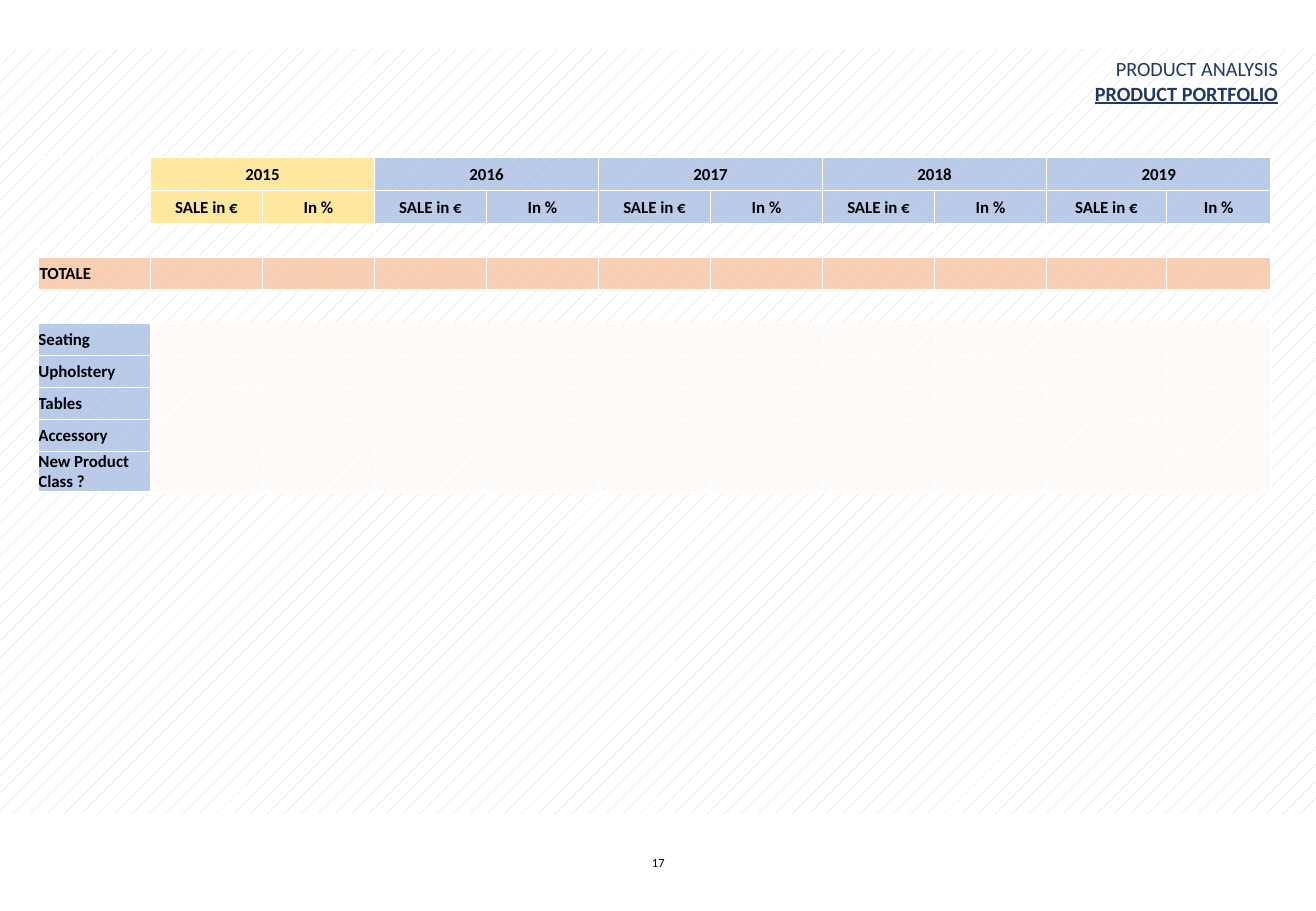
import dataclasses

import lxml.etree
import pptx
import pptx.dml.color
import pptx.enum.dml
import pptx.enum.shapes
import pptx.enum.text
import pptx.oxml.ns
import pptx.util

Pt = pptx.util.Pt
Align = pptx.enum.text.PP_ALIGN
Pattern = pptx.enum.dml.MSO_PATTERN


@dataclasses.dataclass(frozen=True)
class Theme:
    font: str = "Calibri"
    title_size: float = 12
    table_size: float = 10
    number_size: float = 7.4
    black: str = "000000"
    white: str = "FFFFFF"
    navy: str = "203864"
    backdrop: tuple = ("D0CECE", "FFFFFF")
    yellow: tuple = ("FFF2CC", "FFE699")
    blue: tuple = ("DAE3F3", "B4C7E7")
    orange: tuple = ("FBE5D6", "F8CBAD")
    pale: tuple = ("FBE5D6", "FFFFFF")


class PageBuilder:
    def __init__(self, page, theme):
        self.page = page
        self.theme = theme

    def hatch(self, fill, colours, pattern):
        fill.patterned()
        fill.pattern = pattern
        fill.fore_color.rgb, fill.back_color.rgb = map(
            pptx.dml.color.RGBColor.from_string, colours)

    def style(self, para, size, colour, align, bold=False):
        para.alignment = align
        font = para.font
        font.name = self.theme.font
        font.size = Pt(size)
        font.bold = bold
        font.color.rgb = pptx.dml.color.RGBColor.from_string(colour)

    def panel(self, left, top, width, height, colours):
        panel = self.page.shapes.add_shape(
            pptx.enum.shapes.MSO_SHAPE.RECTANGLE,
            Pt(left), Pt(top), Pt(width), Pt(height))
        panel.shadow.inherit = False
        panel.line.fill.background()
        self.hatch(panel.fill, colours, Pattern.PERCENT_5)

    def text(self, left, top, width, height, lines, size, colour, align):
        box = self.page.shapes.add_textbox(Pt(left), Pt(top), Pt(width), Pt(height))
        frame = box.text_frame
        frame.word_wrap = True
        frame.text = "\n".join(lines)
        for para in frame.paragraphs:
            self.style(para, size, colour, align)
        return frame

    def table(self, left, top, widths, heights):
        frame = self.page.shapes.add_table(
            len(heights), len(widths),
            Pt(left), Pt(top), Pt(sum(widths)), Pt(sum(heights)))
        table = frame.table
        table.first_row = False
        table.horz_banding = False
        for column, width in zip(table.columns, widths):
            column.width = Pt(width)
        for row, height in zip(table.rows, heights):
            row.height = Pt(height)
        return table

    def border(self, cell):
        qn = pptx.oxml.ns.qn
        properties = cell._tc.get_or_add_tcPr()
        for side in ("lnL", "lnR", "lnT", "lnB"):
            line = lxml.etree.SubElement(properties, qn("a:" + side), w=str(Pt(1)))
            solid = lxml.etree.SubElement(line, qn("a:solidFill"))
            lxml.etree.SubElement(solid, qn("a:srgbClr"), val=self.theme.white)

    def cell(self, cell, text="", colours=None, align=Align.CENTER, margin=0.72):
        self.border(cell)
        if colours:
            self.hatch(cell.fill, colours, Pattern.DARK_UPWARD_DIAGONAL)
        else:
            cell.fill.background()
        cell.margin_left = cell.margin_right = cell.margin_top = Pt(margin)
        cell.margin_bottom = Pt(0)
        cell.vertical_anchor = pptx.enum.text.MSO_ANCHOR.MIDDLE
        cell.text = text
        para = cell.text_frame.paragraphs[0]
        self.style(para, self.theme.table_size, self.theme.black, align, True)
        if not text:
            ending = para._p.get_or_add_endParaRPr()
            ending.set("sz", str(int(self.theme.table_size * 100)))


def portfolio_table(builder):
    theme = builder.theme
    years = ["2015", "2016", "2017", "2018", "2019"]
    products = ["Seating", "Upholstery", "Tables", "Accessory", "New Product Class ?"]
    total_row, first_product_row = 3, 5
    widths = [66.4] * 9 + [71, 62]
    heights = [19.75] * first_product_row + [18.95] * len(products)
    table = builder.table(22.8, 93.1, widths, heights)

    for row in (0, 1, 2, 4):
        builder.cell(table.cell(row, 0))
    for index, year in enumerate(years):
        colours = theme.blue if index else theme.yellow
        for offset, heading in enumerate(("SALE in €", "In %")):
            column = 1 + 2 * index + offset
            builder.cell(table.cell(0, column), "" if offset else year, colours)
            builder.cell(table.cell(1, column), heading, colours)
            for row in (2, 4):
                builder.cell(table.cell(row, column))
        table.cell(0, 1 + 2 * index).merge(table.cell(0, 2 + 2 * index))

    builder.cell(table.cell(total_row, 0), "TOTALE", theme.orange, Align.LEFT)
    for row, product in enumerate(products, first_product_row):
        builder.cell(table.cell(row, 0), product, theme.blue, Align.LEFT, 0)
    for column in range(1, len(widths)):
        builder.cell(table.cell(total_row, column), colours=theme.orange)
        for row in range(first_product_row, len(heights)):
            builder.cell(table.cell(row, column), colours=theme.pale)


def main():
    deck = pptx.Presentation()
    deck.slide_width, deck.slide_height = Pt(780), Pt(540)
    theme = Theme()
    builder = PageBuilder(deck.slides.add_slide(deck.slide_layouts[6]), theme)

    builder.panel(0, 29, 780, 453.6, theme.backdrop)
    builder.text(302.4, 503.3, 175.7, 28.8, ["17"],
                 theme.number_size, theme.black, Align.CENTER)
    portfolio_table(builder)
    title = builder.text(540, 30, 224.6, 36, ["PRODUCT ANALYSIS", "PRODUCT PORTFOLIO"],
                         theme.title_size, theme.navy, Align.RIGHT)
    subtitle = title.paragraphs[1].font
    subtitle.bold = True
    subtitle.underline = True
    deck.save("out.pptx")


if __name__ == "__main__":
    main()
